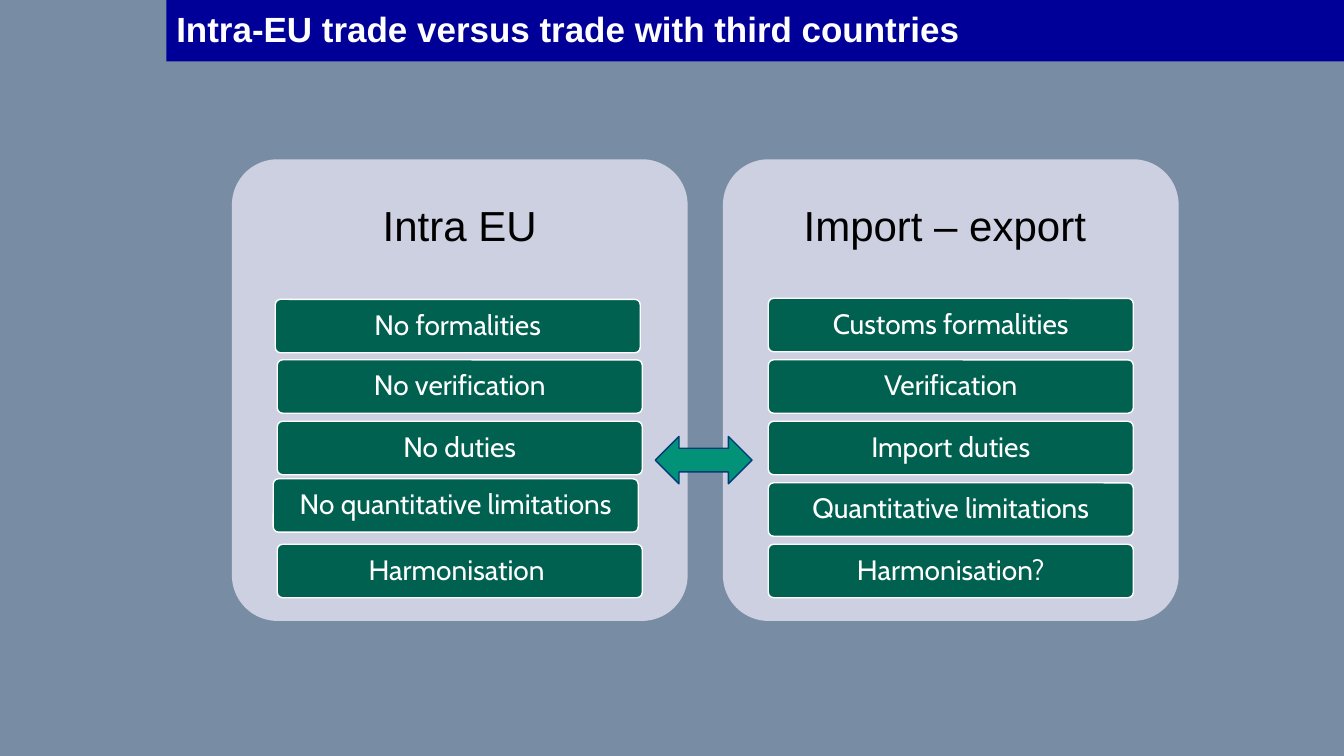
from pptx import Presentation
from pptx.dml.color import RGBColor
from pptx.enum.shapes import MSO_SHAPE
from pptx.enum.text import MSO_ANCHOR, PP_ALIGN
from pptx.util import Inches, Pt

SLATE = RGBColor(0x78, 0x8D, 0xA3)
NAVY = RGBColor(0x00, 0x00, 0x99)
PALE = RGBColor(0xCC, 0xD0, 0xE0)
GREEN = RGBColor(0x01, 0x61, 0x50)
TEAL = RGBColor(0x01, 0x92, 0x77)
BLUE = RGBColor(0x00, 0x3A, 0x78)
WHITE = RGBColor(0xFF, 0xFF, 0xFF)
BLACK = RGBColor(0x00, 0x00, 0x00)

HEAD = {"name": "Arial", "size": Pt(30)}
ITEM = {"name": "Cabin", "size": Pt(20)}
TITLE = {"name": "Arial", "size": Pt(25), "bold": True}

TOP, PITCH = 2.96, 0.61

# Each card: left edge, heading, items as (text, shift right, shift down)
CARDS = [
    (2.3, "Intra EU", [
        ("No formalities", -0.02, 0.01),
        ("No verification", 0, 0),
        ("No duties", 0, 0),
        ("No quantitative limitations", -0.04, -0.04),
        ("Harmonisation ", 0, 0),
    ]),
    (7.17, "Import – export ", [
        ("Customs formalities", 0, 0),
        ("Verification", 0, 0),
        ("Import duties", 0, 0),
        ("Quantitative limitations", 0, 0),
        ("Harmonisation?", 0, 0),
    ]),
]


def add_form(slide, kind, box, fill, line=None):
    form = slide.shapes.add_shape(kind, *map(Inches, box))
    form.shadow.inherit = False
    form.fill.solid()
    form.fill.fore_color.rgb = fill
    if line is None:
        form.line.fill.background()
    else:
        form.line.color.rgb = line
        form.line.width = Pt(1)
    if kind == MSO_SHAPE.ROUNDED_RECTANGLE:
        form.adjustments[0] = 0.1
    return form


def set_text(form, text, style, color, align=PP_ALIGN.CENTER, pad=(0.08, 0.05)):
    frame = form.text_frame
    frame.word_wrap = True
    frame.vertical_anchor = MSO_ANCHOR.MIDDLE
    frame.margin_left = frame.margin_right = Inches(pad[0])
    frame.margin_top = frame.margin_bottom = Inches(pad[1])
    para = frame.paragraphs[0]
    para.alignment = align
    para.line_spacing = 0.9
    run = para.add_run()
    run.text = text
    for key, value in style.items():
        setattr(run.font, key, value)
    run.font.color.rgb = color


def add_card(slide, left, head, items):
    add_form(slide, MSO_SHAPE.ROUNDED_RECTANGLE, (left, 1.58, 4.52, 4.58), PALE)
    label = slide.shapes.add_textbox(*map(Inches, (left, 1.58, 4.52, 1.37)))
    set_text(label, head, HEAD, BLACK, pad=(0.12, 0.12))
    for row, (text, right, down) in enumerate(items):
        box = (left + 0.45 + right, TOP + row * PITCH + down, 3.62, 0.53)
        bar = add_form(slide, MSO_SHAPE.ROUNDED_RECTANGLE, box, GREEN, WHITE)
        set_text(bar, text, ITEM, WHITE)


def main():
    deck = Presentation()
    deck.slide_width, deck.slide_height = Inches(13.33), Inches(7.5)
    slide = deck.slides.add_slide(deck.slide_layouts[6])
    slide.background.fill.solid()
    slide.background.fill.fore_color.rgb = SLATE

    # Two cards with their lists
    for card in CARDS:
        add_card(slide, *card)

    # Arrow between the cards
    add_form(slide, MSO_SHAPE.LEFT_RIGHT_ARROW, (6.5, 4.33, 0.96, 0.47), TEAL, BLUE)

    # Title band
    band = add_form(slide, MSO_SHAPE.RECTANGLE, (1.65, 0, 11.68, 0.61), NAVY)
    set_text(band, "Intra-EU trade versus trade with third countries",
             TITLE, WHITE, PP_ALIGN.LEFT, (0.1, 0.05))

    deck.save("out.pptx")


if __name__ == "__main__":
    main()
